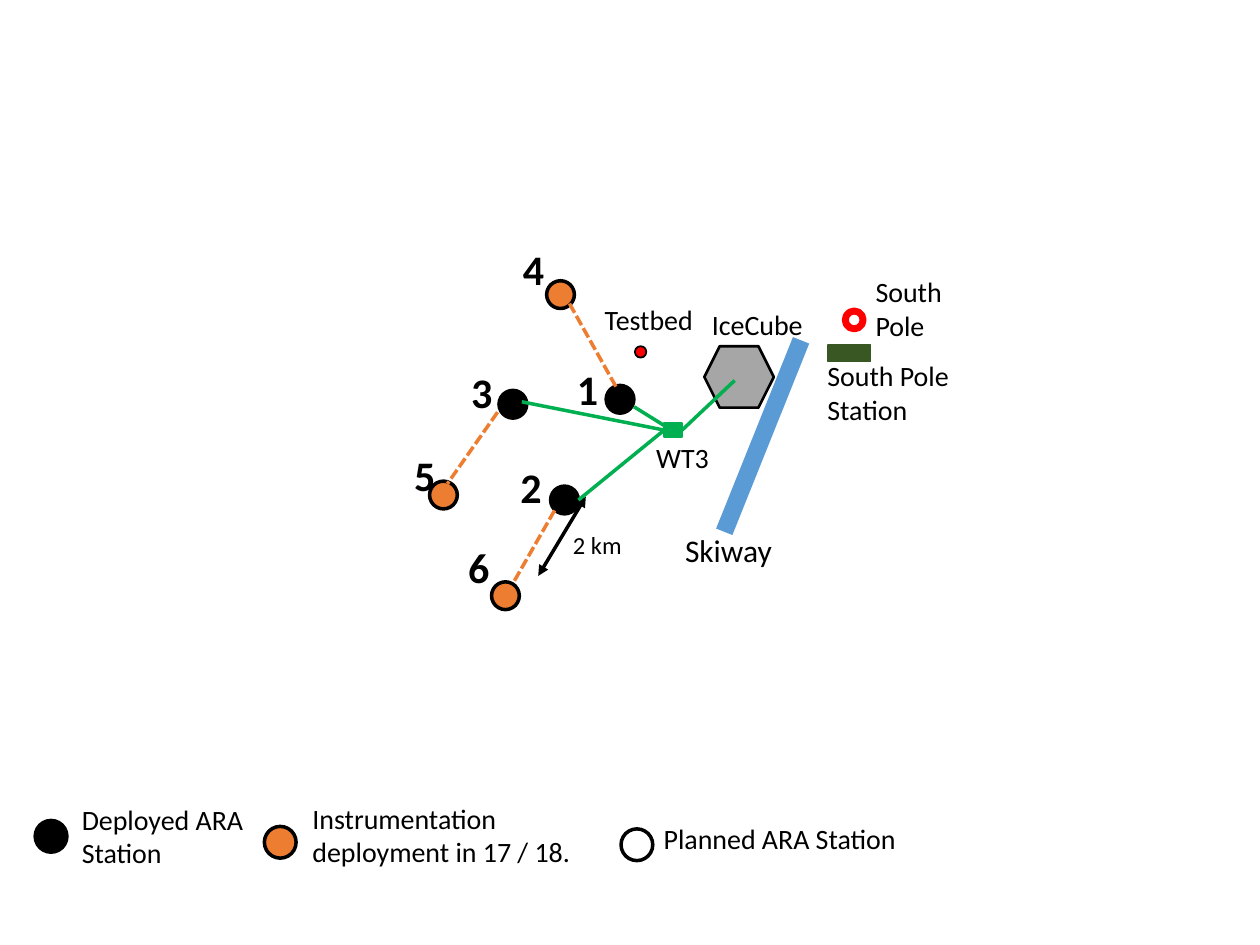
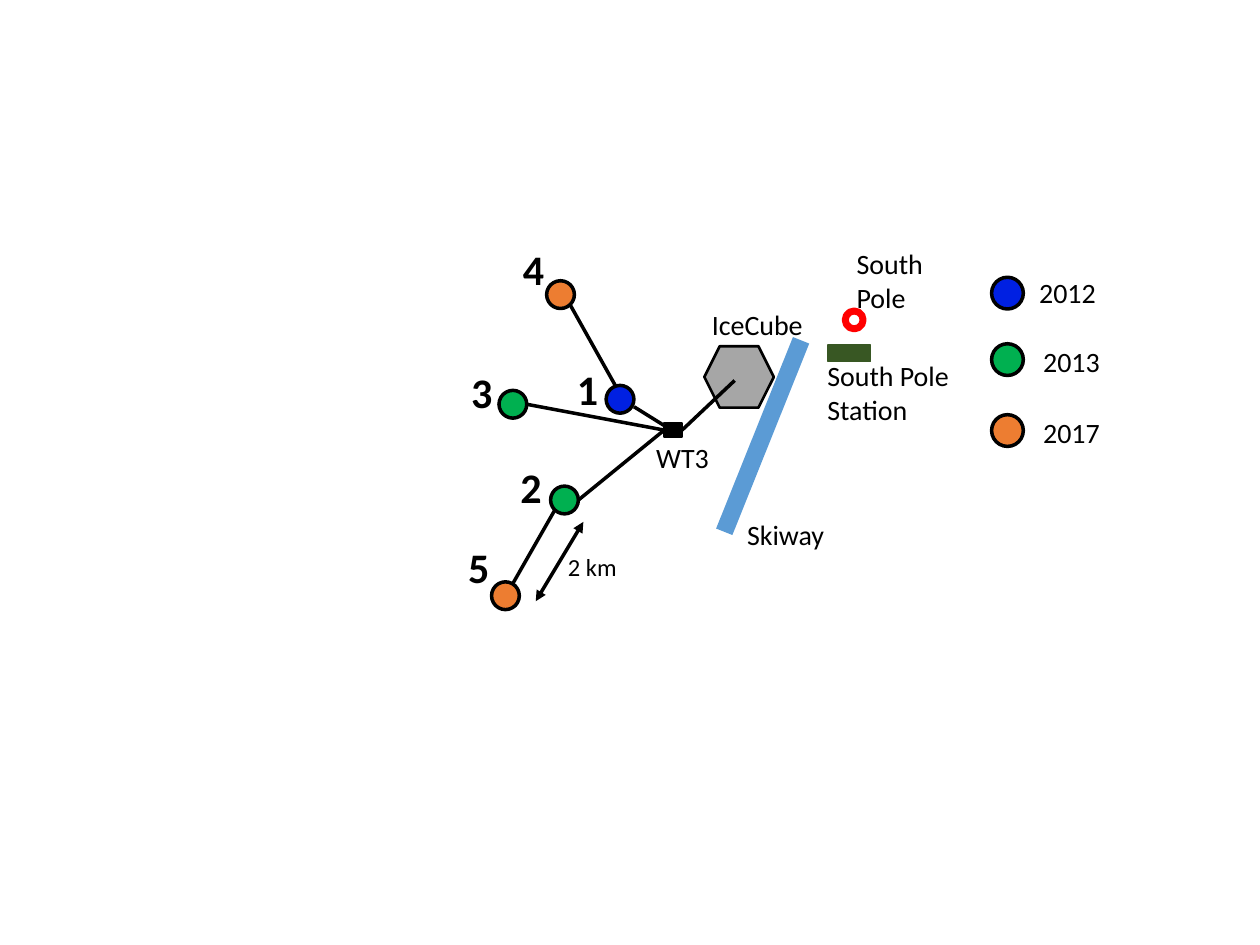
from pptx import Presentation
from pptx.dml.color import RGBColor
from pptx.enum.dml import MSO_LINE
from pptx.enum.shapes import MSO_CONNECTOR, MSO_SHAPE as Preset
from pptx.enum.text import MSO_AUTO_SIZE
from pptx.oxml.ns import qn
from pptx.util import Cm, Pt
from lxml.etree import SubElement

COLOURS = {
    "black": "000000",
    "white": "FFFFFF",
    "grey": "A6A6A6",
    "red": "FF0000",
    "orange": "ED7D31",
    "green": "00B050",
    "blue": "0020E2",
    "skiway": "5B9BD5",
    "station": "385723",
}
FONT = "Calibri"
STATION_SIZE = 0.56
LEGEND_SIZE = 0.64
LEFT_SIDE, RIGHT_SIDE = 1, 3


def colour(name):
    return RGBColor.from_string(COLOURS[name])


def add_shape(slide, preset, box, fill, line, width):
    shape = slide.shapes.add_shape(preset, *map(Cm, box))
    shape.shadow.inherit = False
    if fill:
        shape.fill.solid()
        shape.fill.fore_color.rgb = colour(fill)
    else:
        shape.fill.background()
    shape.line.color.rgb = colour(line)
    shape.line.width = Pt(width)
    return shape


STATION_PLACES = {
    "north": (11.02, 5.66, 10.29, 4.78),
    "inner": (12.22, 7.77, 11.38, 7.21),
    "west": (10.06, 7.87, 9.25, 7.26),
    "south": (11.1, 9.8, 10.24, 9.17),
    "far south": (9.91, 11.73, 9.19, 10.8),
    "far west": (8.66, 9.7, 8.1, 8.94),
}
SPURS = {
    "north": (11.48, 6.12, 12.42, 7.8),
    "far south": (11.18, 10.29, 10.34, 11.76),
    "far west": (10.03, 8.31, 9.02, 9.75),
}
SHARED_LABELS = [
    ("IceCube", (14.1, 6.07, 2.62, 0.94), 16),
    ("WT3", (12.98, 8.76, 2.49, 0.94), 16),
    ("South Pole Station", (16.43, 7.11, 3.43, 1.63), 16),
]

MAPS = [
    {
        "stations": {
            "north": ("4", "orange"),
            "inner": ("1", "black"),
            "west": ("3", "black"),
            "south": ("2", "black"),
            "far south": ("6", "orange"),
            "far west": ("5", "orange"),
        },
        "cable": "green",
        "spur": "orange",
        "spur_dash": MSO_LINE.SQUARE_DOT,
        "west_end": (10.52, 8.1),
        "scale": (10.85, 11.61, 11.81, 10.01),
        "dots": [(12.8, 6.98, 0.23, "red", 1)],
        "legend": [
            ("black", 0.71, 16.54, "Deployed ARA Station", (1.4, 16.05, 4.57, 1.63)),
            ("orange", 5.33, 16.66, "Instrumentation deployment in 17 / 18.", (6.05, 16.03, 6.43, 1.63)),
            ("white", 12.52, 16.71, "Planned ARA Station", (13.13, 16.43, 6.43, 0.94)),
        ],
        "labels": [
            ("2 km", (11.3, 10.57, 2.54, 0.86), 14),
            ("Skiway", (13.56, 10.59, 2.46, 0.91), 18),
            ("South Pole", (17.4, 5.41, 2.11, 1.63), 16),
            ("Testbed", (11.94, 5.97, 2.49, 0.94), 16),
        ],
    },
    {
        "stations": {
            "north": ("4", "orange"),
            "inner": ("1", "blue"),
            "west": ("3", "green"),
            "south": ("2", "green"),
            "far south": ("5", "orange"),
        },
        "cable": "black",
        "spur": "black",
        "spur_dash": None,
        "west_end": (10.62, 8.15),
        "scale": (10.8, 12.12, 11.76, 10.52),
        "dots": [],
        "legend": [
            ("blue", 19.99, 5.59, "2012", (20.7, 5.44, 2.34, 0.94)),
            ("green", 19.99, 6.93, "2013", (20.78, 6.83, 2.34, 0.94)),
            ("orange", 19.99, 8.36, "2017", (20.78, 8.26, 2.34, 0.94)),
        ],
        "labels": [
            ("2 km", (11.2, 11, 2.54, 0.86), 14),
            ("Skiway", (14.81, 10.31, 2.62, 0.94), 16),
            ("South Pole", (17.02, 4.85, 2.11, 1.63), 16),
        ],
    },
]

presentation = Presentation()
presentation.slide_width = Cm(25.4)
presentation.slide_height = Cm(19.05)

for site in MAPS:
    slide = presentation.slides.add_slide(presentation.slide_layouts[6])
    labels = [(*label, False) for label in SHARED_LABELS + site["labels"]]
    dots = list(site["dots"])

    for place, (number, fill) in site["stations"].items():
        left, top, label_left, label_top = STATION_PLACES[place]
        dots.append((left, top, STATION_SIZE, fill, 2))
        labels.append((number, (label_left, label_top, 0.86, 1.12), 24, True))
    for fill, left, top, text, box in site["legend"]:
        dots.append((left, top, LEGEND_SIZE, fill, 2))
        labels.append((text, box, 16, False))
    for left, top, size, fill, width in dots:
        add_shape(slide, Preset.OVAL, (left, top, size, size), fill, "black", width)

    add_shape(slide, Preset.HEXAGON, (14.2, 6.98, 1.4, 1.24), "grey", "black", 1.5)
    add_shape(slide, Preset.RECTANGLE, (16.69, 6.96, 0.86, 0.33), "station", "station", 1)
    add_shape(slide, Preset.OVAL, (17.04, 6.27, 0.36, 0.36), None, "red", 4)
    hub = add_shape(slide, Preset.RECTANGLE, (13.39, 8.53, 0.36, 0.28), site["cable"], site["cable"], 1)

    cable = {"colour": site["cable"]}
    spur = {"colour": site["spur"], "dash": site["spur_dash"]}
    lines = [
        ((16.15, 6.86, 14.6, 10.72), {"colour": "skiway", "width": 10}),
        (site["scale"], {"colour": "black", "arrows": True}),
        ((13.75, 8.67, 14.81, 7.67), {**cable, "hub_side": RIGHT_SIDE}),
        ((13.44, 8.61, 12.78, 8.2), cable),
        ((13.39, 8.67, *site["west_end"]), {**cable, "hub_side": LEFT_SIDE}),
        ((13.39, 8.67, 11.66, 10.08), {**cable, "hub_side": LEFT_SIDE}),
    ]
    lines += [(ends, spur) for place, ends in SPURS.items() if place in site["stations"]]
    for ends, style in lines:
        connector = slide.shapes.add_connector(MSO_CONNECTOR.STRAIGHT, *map(Cm, ends))
        if "hub_side" in style:
            connector.begin_connect(hub, style["hub_side"])
        connector.line.color.rgb = colour(style["colour"])
        connector.line.width = Pt(style.get("width", 2))
        if style.get("dash"):
            connector.line.dash_style = style["dash"]
        properties = connector._element.spPr
        if style.get("arrows"):
            for tag in ("a:headEnd", "a:tailEnd"):
                SubElement(properties.find(qn("a:ln")), qn(tag), type="triangle")
        SubElement(properties, qn("a:effectLst"))

    for text, box, size, bold in labels:
        frame = slide.shapes.add_textbox(*map(Cm, box)).text_frame
        frame.word_wrap = True
        frame.auto_size = MSO_AUTO_SIZE.SHAPE_TO_FIT_TEXT
        run = frame.paragraphs[0].add_run()
        run.text = text
        for name, value in {"name": FONT, "size": Pt(size), "bold": bold}.items():
            setattr(run.font, name, value)
        run.font.color.rgb = colour("black")

presentation.save("out.pptx")
